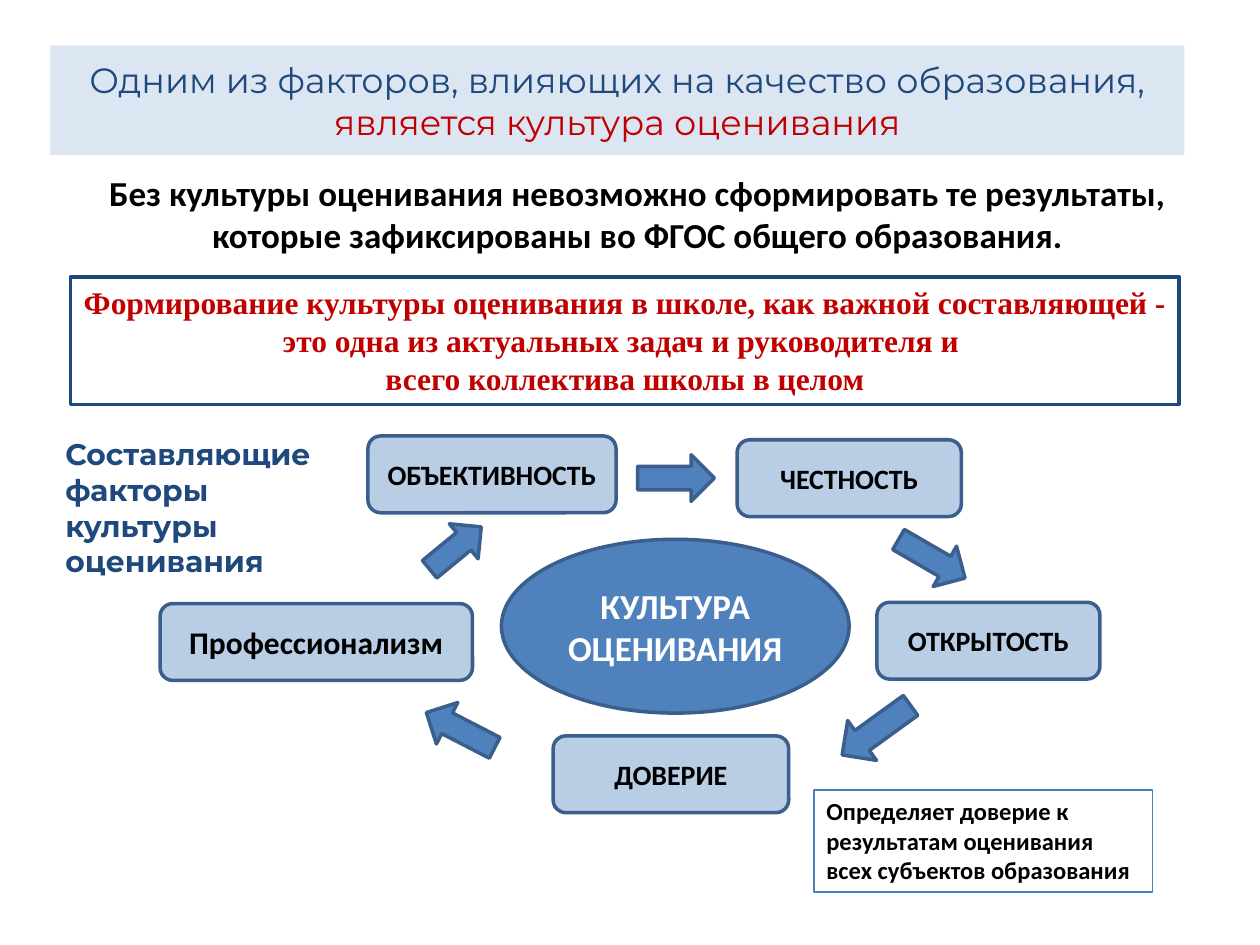
import pptx
import pptx.util
from pptx.dml.color import RGBColor
from pptx.enum.shapes import MSO_SHAPE
from pptx.enum.text import MSO_ANCHOR, PP_ALIGN
from pptx.util import Inches

NAVY = RGBColor(0x1F, 0x49, 0x7D)
RED = RGBColor(0xC0, 0x00, 0x00)
BLUE = RGBColor(0x4F, 0x81, 0xBD)
PALE = RGBColor(0xDC, 0xE6, 0xF2)
LIGHT = RGBColor(0xB9, 0xCD, 0xE5)
EDGE = RGBColor(0x3A, 0x5F, 0x8C)
THIN_EDGE = RGBColor(0x4B, 0x7E, 0xBC)
BLACK = RGBColor(0, 0, 0)
WHITE = RGBColor(0xFF, 0xFF, 0xFF)


def add_block(slide, kind, box, fill=None, line=None, width=2):
    sp = slide.shapes.add_shape(kind, *(Inches(v) for v in box))
    sp.shadow.inherit = False
    if fill is None:
        sp.fill.background()
    else:
        sp.fill.solid()
        sp.fill.fore_color.rgb = fill
    if line is None:
        sp.line.fill.background()
    else:
        sp.line.color.rgb = line
        sp.line.width = pptx.util.Pt(width)
    return sp


def write(sp, paragraphs, size, color, font="Calibri", bold=True,
          align=PP_ALIGN.CENTER, anchor=MSO_ANCHOR.MIDDLE):
    tf = sp.text_frame
    tf.word_wrap = True
    tf.vertical_anchor = anchor
    for i, text in enumerate(paragraphs):
        p = tf.paragraphs[0] if i == 0 else tf.add_paragraph()
        p.text = text
        p.alignment = align
        p.font.name = font
        p.font.size = pptx.util.Pt(size)
        p.font.bold = bold
        p.font.color.rgb = color
    return tf


def add_text(slide, box, paragraphs, size, color, **style):
    sp = slide.shapes.add_textbox(*(Inches(v) for v in box))
    return write(sp, paragraphs, size, color, anchor=MSO_ANCHOR.TOP, **style)


def add_title(slide, box):
    sp = add_block(slide, MSO_SHAPE.RECTANGLE, box, PALE)
    tf = write(sp, ["Одним из факторов, влияющих на качество образования, "],
               20, NAVY, "Montserrat", bold=False)
    r = tf.paragraphs[0].add_run()
    r.text = "является культура оценивания"
    r.font.color.rgb = RED


def add_statement(slide, box):
    tf = add_text(slide, box, [
        "Без культуры оценивания невозможно сформировать те результаты, "
        "которые зафиксированы во ФГОС общего образования."], 20, BLACK)
    tf.paragraphs[0].space_after = pptx.util.Pt(6)


def add_task(slide, box):
    sp = add_block(slide, MSO_SHAPE.RECTANGLE, box, line=NAVY)
    write(sp, ["Формирование культуры оценивания в школе, как важной составляющей - "
               "это одна из актуальных задач и руководителя и ",
               "всего коллектива школы в целом"],
          18, RED, "Times New Roman", anchor=MSO_ANCHOR.TOP)


def add_cycle(slide, box):
    """Five factors around the central ellipse, linked clockwise by arrows."""
    left, top, width, height = box
    ellipse_w, ellipse_h, factor_h = 2.76, 1.38, 0.61
    centre = add_block(slide, MSO_SHAPE.OVAL,
                       (left + 2.71, top + 0.82, ellipse_w, ellipse_h), BLUE, EDGE)
    write(centre, ["КУЛЬТУРА ОЦЕНИВАНИЯ"], 20, WHITE)

    factors = [  # text, x, y, width, font size
        ("ОБЪЕКТИВНОСТЬ", 1.65, 0, 1.97, 16),
        ("ЧЕСТНОСТЬ", 4.58, 0.03, 1.78, 16),
        ("ОТКРЫТОСТЬ", 5.69, 1.32, 1.77, 16),
        ("ДОВЕРИЕ", 3.12, height - factor_h, 1.87, 16),
        ("Профессионализм", 0, 1.33, 2.48, 18),
    ]
    for text, x, y, w, size in factors:
        sp = add_block(slide, MSO_SHAPE.ROUNDED_RECTANGLE,
                       (left + x, top + y, w, factor_h), LIGHT, EDGE)
        write(sp, [text], size, BLACK)

    arrows = [  # x, y, width, height, rotation
        (3.79, 0.15, 0.61, 0.37, 0),
        (5.82, 0.79, 0.61, 0.37, 30.1),
        (5.35, 2.14, 0.67, 0.39, 144.1),
        (2.08, 2.15, 0.61, 0.37, 207.3),
        (2.08, 0.71, 0.53, 0.36, 320.6),
    ]
    for x, y, w, h, rotation in arrows:
        sp = add_block(slide, MSO_SHAPE.RIGHT_ARROW, (left + x, top + y, w, h), BLUE, EDGE)
        sp.rotation = rotation


def add_cycle_caption(slide, box):
    add_text(slide, box, ["Составляющие факторы", "культуры оценивания"],
             17, NAVY, font="Montserrat", align=PP_ALIGN.LEFT)


def add_trust_note(slide, box):
    sp = add_block(slide, MSO_SHAPE.RECTANGLE, box, line=THIN_EDGE, width=0.75)
    write(sp, ["Определяет доверие к результатам оценивания всех субъектов образования"],
          14, BLACK, align=PP_ALIGN.LEFT, anchor=MSO_ANCHOR.TOP)


def main():
    prs = pptx.Presentation()
    prs.slide_width, prs.slide_height = Inches(10), Inches(7.5)
    slide = prs.slides.add_slide(prs.slide_layouts[6])
    add_title(slide, (0.4, 0.36, 9, 0.87))
    add_cycle(slide, (1.27, 3.46, 7.46, 2.99))
    add_statement(slide, (0.66, 1.31, 8.8, 0.77))
    add_cycle_caption(slide, (0.42, 3.41, 2.38, 1.25))
    add_trust_note(slide, (6.46, 6.27, 2.69, 0.81))
    add_task(slide, (0.56, 2.2, 8.8, 1.01))
    prs.save("out.pptx")


if __name__ == "__main__":
    main()
